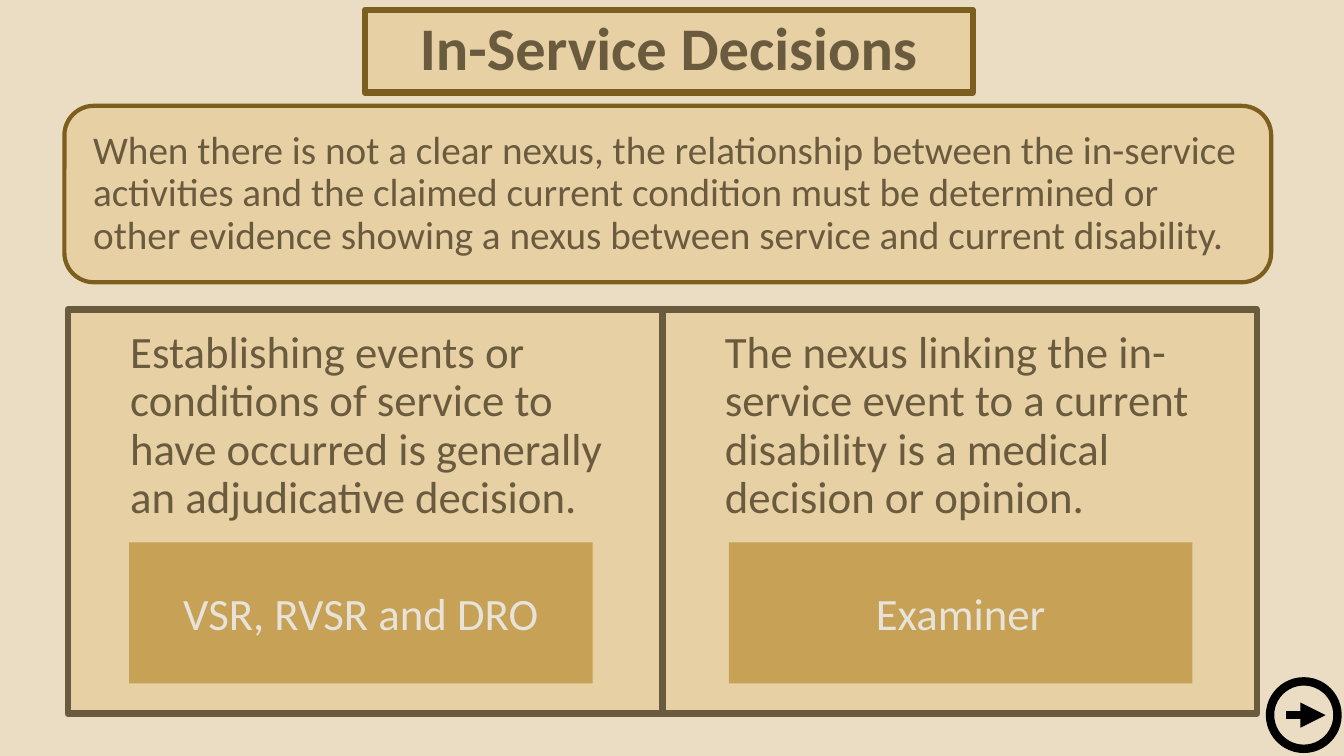
"""Build the In-Service Decisions slide."""
from dataclasses import dataclass

from pptx import Presentation
from pptx.dml.color import RGBColor
from pptx.enum.shapes import MSO_CONNECTOR as Connector, MSO_SHAPE as Shape
from pptx.enum.text import MSO_ANCHOR as Anchor, MSO_AUTO_SIZE as AutoSize, PP_ALIGN as Align
from pptx.oxml.ns import qn
from pptx.util import Pt
from lxml.etree import SubElement


@dataclass(frozen=True)
class Theme:
    font: str = "Calibri"
    background: str = "EBDDC3"
    panel: str = "E7D0A4"
    role: str = "C6A156"
    border: str = "7C5F1E"
    text: str = "6A5B3F"
    role_text: str = "E8E3D8"
    icon: str = "000000"
    title_size: float = 43.2
    summary_size: float = 28
    body_size: float = 32
    thin: float = 3
    medium: float = 4.5
    thick: float = 6


class SlideBuilder:
    def __init__(self, presentation, theme):
        self.theme = theme
        self.slide = presentation.slides.add_slide(presentation.slide_layouts[5])
        self.fill(self.slide.background, theme.background)

    def fill(self, target, color):
        target.fill.solid()
        target.fill.fore_color.rgb = RGBColor.from_string(color)

    def outline(self, shape, color, width):
        shape.line.color.rgb = RGBColor.from_string(color)
        shape.line.width = Pt(width)

    def set_text(self, shape, text, size, color, align=Align.LEFT, anchor=Anchor.MIDDLE,
                 insets=(7.2, 3.6, 7.2, 3.6), spacing=0.9, before=0, indent=0, bold=False):
        frame = shape.text_frame
        frame.text = text
        frame.word_wrap = True
        frame.auto_size = AutoSize.NONE
        frame.vertical_anchor = anchor
        (frame.margin_left, frame.margin_top,
         frame.margin_right, frame.margin_bottom) = map(Pt, insets)
        paragraph = frame.paragraphs[0]
        paragraph.alignment = align
        paragraph.line_spacing = spacing
        paragraph.space_before = Pt(before)
        if indent:
            paragraph._p.get_or_add_pPr().set("marL", str(Pt(indent)))
        font = paragraph.runs[0].font
        font.name, font.size, font.bold = self.theme.font, Pt(size), bold
        font.color.rgb = RGBColor.from_string(color)

    def box(self, kind, bounds, fill=None, border=None, width=0):
        shape = self.slide.shapes.add_shape(kind, *map(Pt, bounds))
        shape.shadow.inherit = False
        if fill:
            self.fill(shape, fill)
        else:
            shape.fill.background()
        if border:
            self.outline(shape, border, width)
        else:
            shape.line.fill.background()
        return shape

    def title(self, text, bounds):
        theme, title = self.theme, self.slide.shapes.title
        title.left, title.top, title.width, title.height = map(Pt, bounds)
        self.fill(title, theme.panel)
        self.outline(title, theme.border, theme.medium)
        self.set_text(title, text, theme.title_size, theme.text, Align.CENTER, bold=True)

    def summary(self, text, bounds):
        theme = self.theme
        shape = self.box(Shape.ROUNDED_RECTANGLE, bounds, theme.panel, theme.border, theme.thin)
        self.set_text(shape, text, theme.summary_size, theme.text,
                      insets=(14.4, 3.6, 7.2, 3.6), before=10)

    def panel(self, text, bounds):
        theme = self.theme
        shape = self.box(Shape.RECTANGLE, bounds, theme.panel, theme.text, theme.medium)
        self.set_text(shape, text, theme.body_size, theme.text, anchor=Anchor.TOP,
                      insets=(36, 14.4, 28.8, 3.6), before=10, indent=8.64)

    def role(self, text, bounds):
        theme = self.theme
        shape = self.box(Shape.RECTANGLE, bounds, theme.role)
        self.set_text(shape, text, theme.body_size, theme.role_text, Align.CENTER, spacing=1.0)

    def next_icon(self, left, top, size):
        theme = self.theme
        self.box(Shape.OVAL, (left, top, size, size), None, theme.icon, theme.thick)
        middle = top + size / 2
        ends = (left + 11.5, middle, left + size - 8.5, middle)
        arrow = self.slide.shapes.add_connector(Connector.STRAIGHT, *map(Pt, ends))
        self.outline(arrow, theme.icon, theme.thick)
        SubElement(arrow.line._get_or_add_ln(), qn("a:tailEnd"), type="triangle")
        SubElement(arrow._element.spPr, qn("a:effectLst"))


def main():
    presentation = Presentation()
    presentation.slide_width, presentation.slide_height = Pt(960), Pt(540)
    builder = SlideBuilder(presentation, Theme())
    builder.title("In-Service Decisions", (260.6, 7.2, 434.2, 59))
    builder.summary(
        "When there is not a clear nexus, the relationship between the in-service activities "
        "and the claimed current condition must be determined or other evidence showing a "
        "nexus between service and current disability.", (46, 75.6, 862, 126))
    decisions = [
        ("Establishing events or conditions of service to have occurred is generally "
         "an adjudicative decision.", "VSR, RVSR and DRO"),
        ("The nexus linking the in-service event to a current disability is a medical "
         "decision or opinion.", "Examiner"),
    ]
    for column, (decision, role) in enumerate(decisions):
        builder.panel(decision, (48.4 + 424.8 * column, 221, 424.8, 288.7))
        builder.role(role, (92.2 + 428.4 * column, 387.4, 331.2, 100.8))
    builder.next_icon(907.2, 486.7, 48.2)
    presentation.save("out.pptx")


if __name__ == "__main__":
    main()
